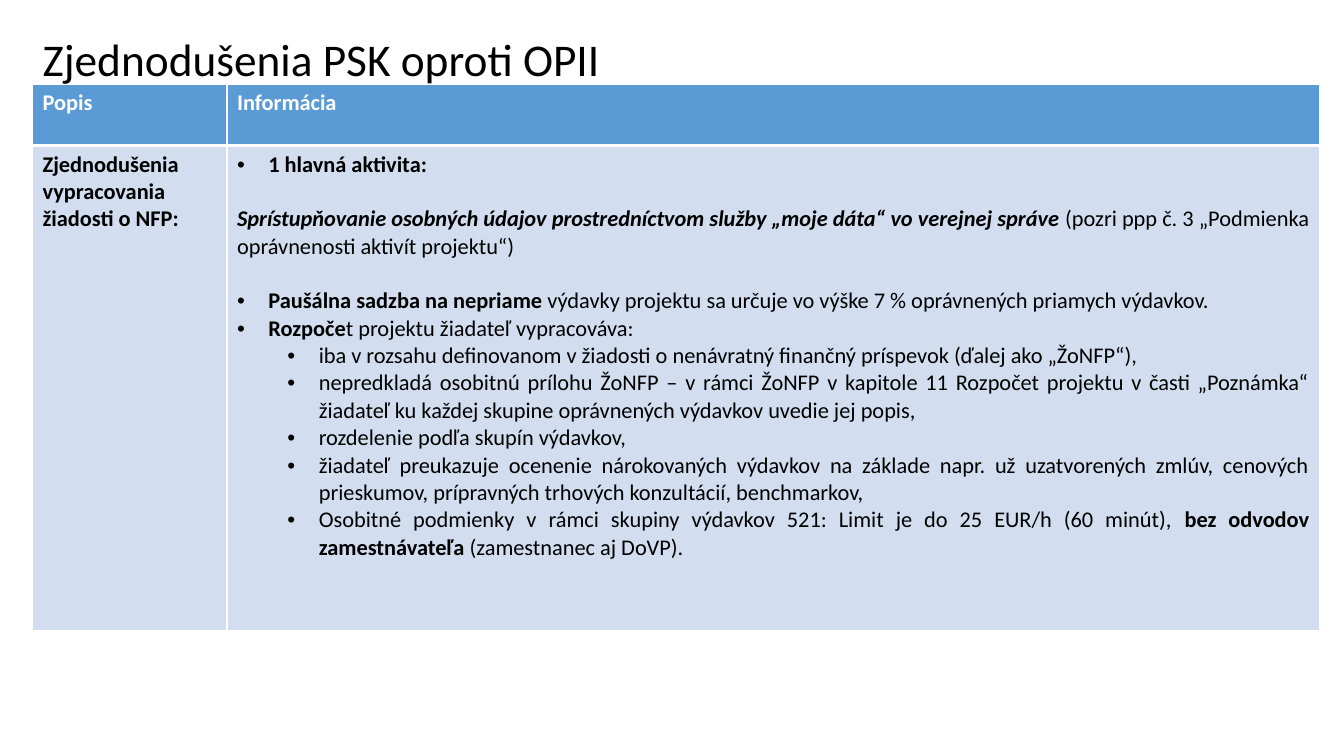
from lxml.etree import SubElement
from pptx import Presentation
from pptx.dml.color import RGBColor
from pptx.enum.text import MSO_ANCHOR, MSO_AUTO_SIZE, PP_ALIGN
from pptx.oxml.ns import qn
from pptx.util import Cm, Pt

BLACK = RGBColor(0x00, 0x00, 0x00)
WHITE = RGBColor(0xFF, 0xFF, 0xFF)
HEADER_BLUE = RGBColor(0x5B, 0x9B, 0xD5)
BODY_BLUE = RGBColor(0xD2, 0xDE, 0xEF)

FONT = {"name": "Calibri", "size": Pt(16), "bold": False, "italic": False}
BOLD = {"bold": True}
BOLD_ITALIC = {"bold": True, "italic": True}
PLAIN = {}
BLANK_LINE = Pt(19.5)
HANGING = Cm(0.79)
INDENTS = [Cm(0.79), Cm(2.06)]

TITLE = "Zjednodušenia PSK oproti OPII"
HEADERS = ["Popis", "Informácia"]
TOPIC = "Zjednodušenia vypracovania žiadosti o NFP:"
DETAILS = [
    (0, [("1 hlavná aktivita:", BOLD)]),
    (None, [
        ("Sprístupňovanie osobných údajov prostredníctvom služby „moje dáta“ vo verejnej správe ", BOLD_ITALIC),
        ("(pozri ppp č. 3 „Podmienka oprávnenosti aktivít projektu“)", PLAIN),
    ]),
    (0, [
        ("Paušálna sadzba na nepriame ", BOLD),
        ("výdavky projektu sa určuje vo výške 7 % oprávnených priamych výdavkov.", PLAIN),
    ]),
    (0, [("Rozpoče", BOLD), ("t projektu žiadateľ vypracováva:", PLAIN)]),
    (1, [("iba v rozsahu definovanom v žiadosti o nenávratný finančný príspevok (ďalej ako „ŽoNFP“),", PLAIN)]),
    (1, [("nepredkladá osobitnú prílohu ŽoNFP – v rámci ŽoNFP v kapitole 11 Rozpočet projektu v časti "
          "„Poznámka“ žiadateľ ku každej skupine oprávnených výdavkov uvedie jej popis,", PLAIN)]),
    (1, [("rozdelenie podľa skupín výdavkov,", PLAIN)]),
    (1, [("žiadateľ preukazuje ocenenie nárokovaných výdavkov na základe napr. už uzatvorených zmlúv, "
          "cenových prieskumov, prípravných trhových konzultácií, benchmarkov,", PLAIN)]),
    (1, [
        ("Osobitné podmienky v rámci skupiny výdavkov 521: Limit je do 25 EUR/h (60 minút), ", PLAIN),
        ("bez odvodov zamestnávateľa", BOLD),
        (" (zamestnanec aj DoVP).", PLAIN),
    ]),
]


def set_format(target, values):
    """Set every attribute named in a dict of format values."""
    for name, value in values.items():
        setattr(target, name, value)


def add_run(paragraph, text, color, **values):
    """Append a run in the slide font with the given overrides."""
    run = paragraph.add_run()
    run.text = text
    set_format(run.font, FONT | values)
    run.font.color.rgb = color


def set_bullet(paragraph, level):
    """Give a paragraph a round bullet and the hanging indent of its level."""
    paragraph.level = level
    properties = paragraph._p.get_or_add_pPr()
    properties.set("marL", str(INDENTS[level]))
    properties.set("indent", str(-HANGING))
    SubElement(properties, qn("a:buFont"), typeface="Arial")
    SubElement(properties, qn("a:buChar"), char="•")


def style_cell(cell, fill, top, bottom):
    """Draw white cell borders, then fill the cell."""
    properties = cell._tc.get_or_add_tcPr()
    for side, width in {"L": 1, "R": 1, "T": top, "B": bottom}.items():
        line = SubElement(properties, qn(f"a:ln{side}"), w=str(Pt(width)))
        SubElement(SubElement(line, qn("a:solidFill")), qn("a:srgbClr"), val=str(WHITE))
    cell.fill.solid()
    cell.fill.fore_color.rgb = fill


def fill_details(text_frame):
    """Write the justified list of simplifications."""
    for index, (level, runs) in enumerate(DETAILS):
        paragraph = text_frame.add_paragraph() if index else text_frame.paragraphs[0]
        paragraph.alignment = PP_ALIGN.JUSTIFY
        if level is None:
            set_format(paragraph, {"space_before": BLANK_LINE, "space_after": BLANK_LINE})
        else:
            set_bullet(paragraph, level)
        for text, values in runs:
            add_run(paragraph, text, BLACK, **values)


def place_title(slide, left, top, width, height):
    """Place the slide title in the given box."""
    title = slide.shapes.title
    set_format(title, {"left": left, "top": top, "width": width, "height": height})
    set_format(title.text_frame, {
        "auto_size": MSO_AUTO_SIZE.NONE, "vertical_anchor": MSO_ANCHOR.MIDDLE, "word_wrap": True,
    })
    paragraph = title.text_frame.paragraphs[0]
    set_format(paragraph, {"alignment": PP_ALIGN.LEFT, "line_spacing": 0.9})
    add_run(paragraph, TITLE, BLACK, size=Pt(32.4))
    add_run(paragraph, " ", BLACK, size=Pt(39.6))


def place_table(slide, left, top, width, height):
    """Place the table of simplifications in the given box."""
    table = slide.shapes.add_table(2, 2, left, top, width, height).table
    topic_width, header_height = Cm(4.9), Cm(1.55)
    table.columns[0].width = topic_width
    table.columns[1].width = width - topic_width
    table.rows[0].height = header_height
    table.rows[1].height = height - header_height
    for column, header in enumerate(HEADERS):
        style_cell(table.cell(0, column), HEADER_BLUE, 1, 3)
        style_cell(table.cell(1, column), BODY_BLUE, 3, 1)
        add_run(table.cell(0, column).text_frame.paragraphs[0], header, WHITE, **BOLD)
    add_run(table.cell(1, 0).text_frame.paragraphs[0], TOPIC, BLACK, **BOLD)
    fill_details(table.cell(1, 1).text_frame)


def main():
    """Build the slide and save the presentation."""
    presentation = Presentation()
    set_format(presentation, {"slide_width": Cm(33.87), "slide_height": Cm(19.05)})
    slide = presentation.slides.add_slide(presentation.slide_layouts[5])
    left, title_top, title_height = Cm(0.82), Cm(0.82), Cm(1.3)
    place_title(slide, left, title_top, Cm(25.4), title_height)
    place_table(slide, left, title_top + title_height, Cm(32.43), Cm(13.77))
    presentation.save("out.pptx")


if __name__ == "__main__":
    main()
